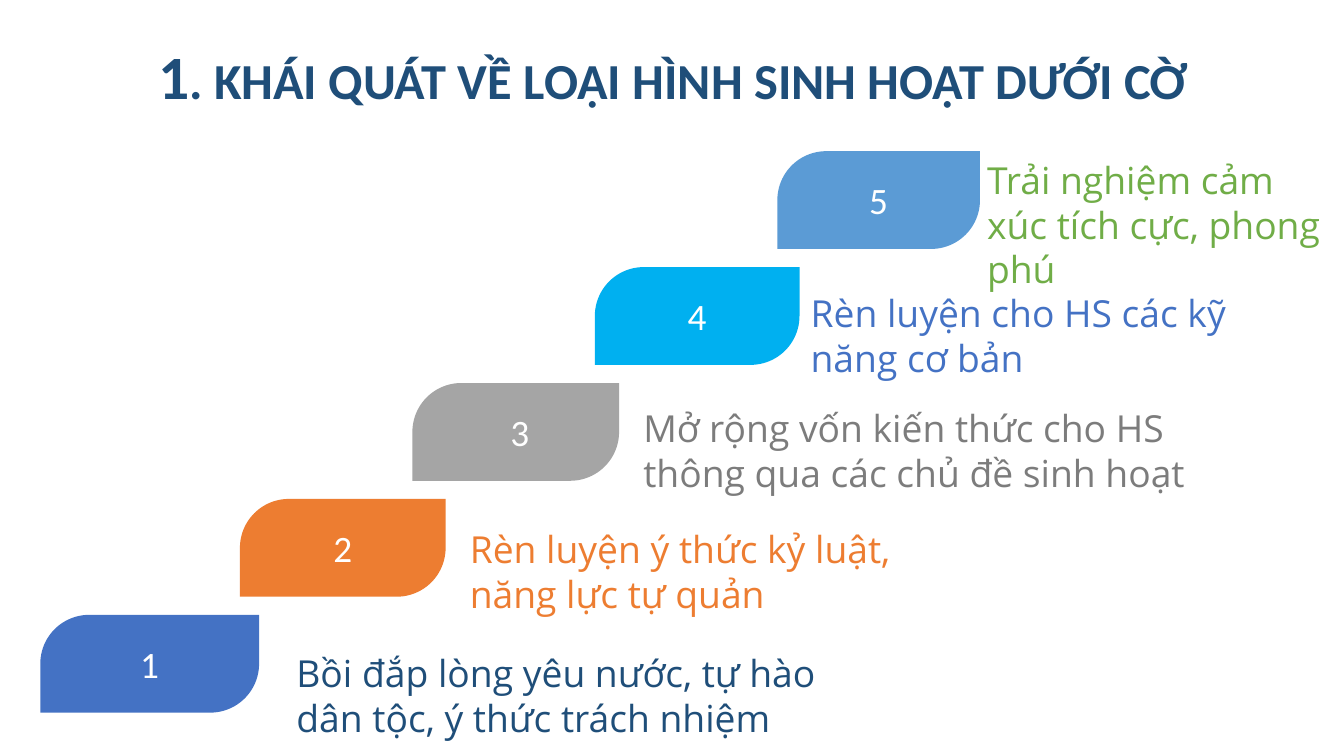
from dataclasses import dataclass

from pptx import Presentation
from pptx.dml.color import RGBColor
from pptx.enum.shapes import MSO_SHAPE
from pptx.enum.text import MSO_ANCHOR, MSO_AUTO_SIZE, PP_ALIGN
from pptx.util import Inches, Pt


@dataclass(frozen=True)
class Theme:
    """Colours, fonts and type sizes of the slide."""
    navy: str = "1F4E79"
    blue: str = "4472C4"
    orange: str = "ED7D31"
    silver: str = "A5A5A5"
    gray: str = "7C7C7C"
    cyan: str = "00B0F0"
    sky: str = "5B9BD5"
    green: str = "70AD47"
    white: str = "FFFFFF"
    heading_font: str = "Calibri"
    body_font: str = "Open Sans"
    title_number_size: float = 44
    title_size: float = 36
    step_size: float = 26.6


THEME = Theme()
TOP_STEP = 1.5
STEP_RISE = 1.15
STEP_HEIGHT = 0.97
GOAL_HEIGHT = 0.95

# number, left, width, fill, goal, goal left, goal top, goal width, goal colour
STEPS = [
    ("5", 7.71, 2.01, THEME.sky, "Trải nghiệm cảm xúc tích cực, phong phú",
     9.74, 1.53, 3.59, THEME.green),
    ("4", 5.9, 2.03, THEME.cyan, "Rèn luyện cho HS các kỹ năng cơ bản",
     7.99, 2.85, 4.73, THEME.blue),
    (" 3", 4.09, 2.05, THEME.silver, "Mở rộng vốn kiến thức cho HS thông qua các chủ đề sinh hoạt",
     6.33, 3.99, 5.81, THEME.gray),
    ("2", 2.38, 2.04, THEME.orange, "Rèn luyện ý thức kỷ luật, năng lực tự quản",
     4.61, 5.19, 5.13, THEME.orange),
    ("1", 0.4, 2.17, THEME.blue, "Bồi đắp lòng yêu nước, tự hào dân tộc, ý thức trách nhiệm",
     2.89, 6.42, 5.4, THEME.navy),
]


def add_text(paragraph, text, *, size, color, font=THEME.heading_font, bold=False):
    """Append a formatted run to a paragraph."""
    run = paragraph.add_run()
    run.text = text
    run.font.name = font
    run.font.size = Pt(size)
    run.font.bold = bold
    run.font.color.rgb = RGBColor.from_string(color)


def add_title(slide):
    """Add the centred heading with its larger number."""
    frame = slide.shapes.add_textbox(
        Inches(1.41), Inches(0.33), Inches(10.52), Inches(0.84)).text_frame
    frame.word_wrap = False
    frame.auto_size = MSO_AUTO_SIZE.SHAPE_TO_FIT_TEXT
    heading = frame.paragraphs[0]
    heading.alignment = PP_ALIGN.CENTER
    add_text(heading, "1", size=THEME.title_number_size, color=THEME.navy, bold=True)
    add_text(heading, ". KHÁI QUÁT VỀ LOẠI HÌNH SINH HOẠT DƯỚI CỜ",
             size=THEME.title_size, color=THEME.navy, bold=True)


def add_step(slide, number, left, top, width, fill):
    """Add one numbered leaf of the staircase."""
    leaf = slide.shapes.add_shape(
        MSO_SHAPE.ROUND_2_DIAG_RECTANGLE,
        Inches(left), Inches(top), Inches(width), Inches(STEP_HEIGHT))
    leaf.adjustments[0] = 0.5
    leaf.adjustments[1] = 0
    leaf.shadow.inherit = False
    leaf.fill.solid()
    leaf.fill.fore_color.rgb = RGBColor.from_string(fill)
    leaf.line.fill.background()
    leaf.text_frame.vertical_anchor = MSO_ANCHOR.MIDDLE
    label = leaf.text_frame.paragraphs[0]
    label.alignment = PP_ALIGN.CENTER
    add_text(label, number, size=THEME.step_size, color=THEME.white)


def add_goal(slide, goal, left, top, width, color):
    """Add the goal written beside a step."""
    frame = slide.shapes.add_textbox(
        Inches(left), Inches(top), Inches(width), Inches(GOAL_HEIGHT)).text_frame
    frame.word_wrap = True
    frame.auto_size = MSO_AUTO_SIZE.SHAPE_TO_FIT_TEXT
    frame.margin_left = frame.margin_right = Inches(0.05)
    frame.margin_top = frame.margin_bottom = Inches(0.03)
    add_text(frame.paragraphs[0], goal, size=THEME.step_size, color=color,
             font=THEME.body_font)


def main():
    """Build the staircase slide and save it."""
    deck = Presentation()
    deck.slide_width = Inches(13.33)
    deck.slide_height = Inches(7.5)
    slide = deck.slides.add_slide(deck.slide_layouts[6])
    add_title(slide)
    for level, (number, left, width, fill, goal, goal_left, goal_top,
                goal_width, goal_color) in enumerate(STEPS):
        add_step(slide, number, left, TOP_STEP + level * STEP_RISE, width, fill)
        add_goal(slide, goal, goal_left, goal_top, goal_width, goal_color)
    deck.save("out.pptx")


if __name__ == "__main__":
    main()
